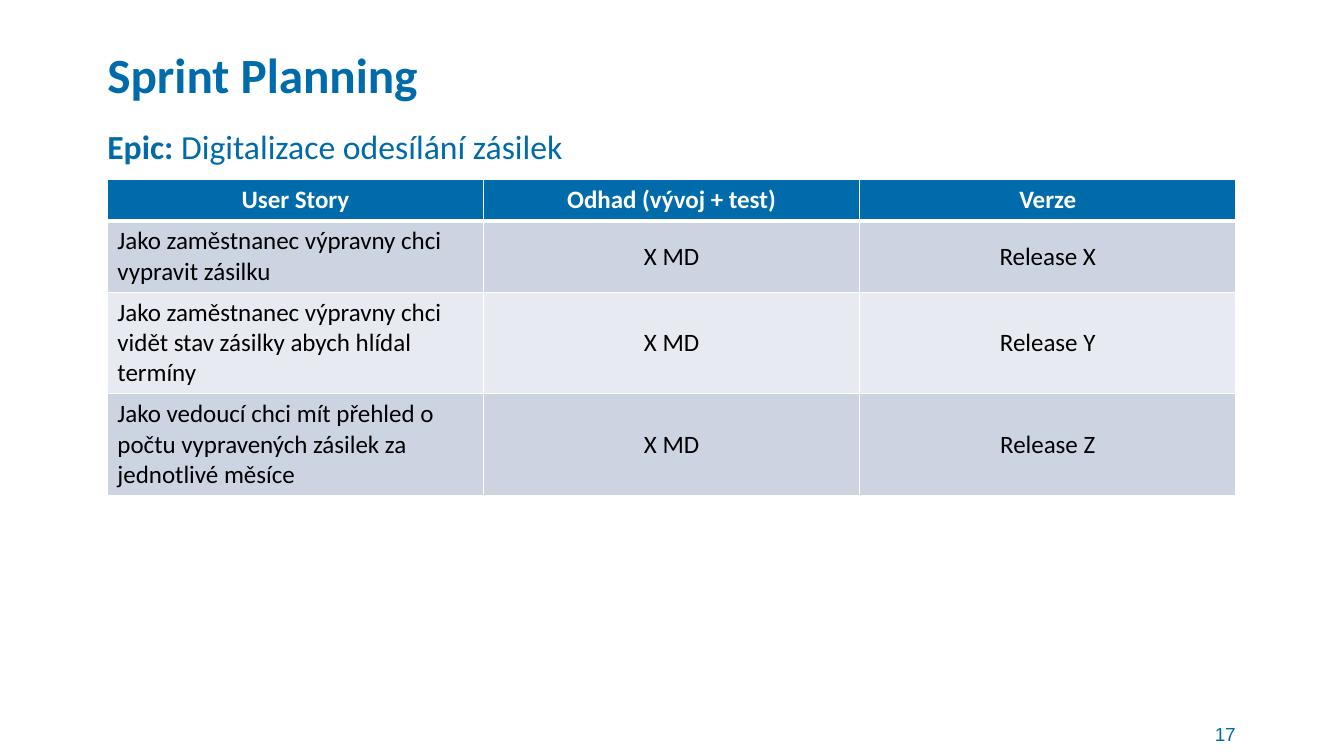
import pptx
import pptx.dml.color
import pptx.enum.text
import pptx.oxml
import pptx.oxml.ns
import pptx.util

Pt = pptx.util.Pt
ALIGN = pptx.enum.text.PP_ALIGN
ANCHOR = pptx.enum.text.MSO_ANCHOR
BLUE, WHITE, BLACK = "006BAB", "FFFFFF", "000000"
BANDS = ("CCD4E2", "E7EBF1")


def colour(value):
    return pptx.dml.color.RGBColor.from_string(value)


class SlideBuilder:
    """Holds the text style and the current slide, and adds its elements."""

    def __init__(self, slide, font="Calibri"):
        self.slide = slide
        self.font = font

    def add_runs(self, paragraph, runs, size, hue, align=ALIGN.LEFT, font=None):
        paragraph.alignment = align
        for text, bold in runs:
            run = paragraph.add_run()
            run.text = text
            style = {"name": font or self.font, "size": Pt(size), "bold": bold}
            for key, value in style.items():
                setattr(run.font, key, value)
            run.font.color.rgb = colour(hue)

    def frame(self, shape, box, anchor):
        for key, value in zip(("left", "top", "width", "height"), box):
            setattr(shape, key, Pt(value))
        layout = {
            "word_wrap": True,
            "auto_size": pptx.enum.text.MSO_AUTO_SIZE.NONE,
            "vertical_anchor": anchor,
            "margin_left": 0,
            "margin_top": 0,
            "margin_right": 0,
            "margin_bottom": 0,
        }
        for key, value in layout.items():
            setattr(shape.text_frame, key, value)
        return shape.text_frame.paragraphs[0]

    def title(self, text, box, size):
        heading = self.frame(self.slide.shapes.title, box, ANCHOR.BOTTOM)
        self.add_runs(heading, [(text, True)], size, BLUE)

    def text(self, runs, box, size, anchor=ANCHOR.TOP, **style):
        shape = self.slide.shapes.add_textbox(0, 0, 0, 0)
        self.add_runs(self.frame(shape, box, anchor), runs, size, BLUE, **style)

    def border(self, cell, side, width):
        line = pptx.oxml.parse_xml(
            f'<a:ln{side} {pptx.oxml.ns.nsdecls("a")} w="{Pt(width)}">'
            f'<a:solidFill><a:srgbClr val="{WHITE}"/></a:solidFill></a:ln{side}>'
        )
        cell._tc.get_or_add_tcPr().append(line)

    def cell(self, cell, text, row, column, size):
        header = row == 0
        widths = {"L": 1, "R": 1, "T": 3 if row == 1 else 1, "B": 3 if header else 1}
        for side, width in widths.items():
            self.border(cell, side, width)
        cell.fill.solid()
        cell.fill.fore_color.rgb = colour(BLUE if header else BANDS[(row - 1) % 2])
        cell.vertical_anchor = ANCHOR.TOP if header else ANCHOR.MIDDLE
        align = ALIGN.CENTER if header or column else ALIGN.LEFT
        paragraph = cell.text_frame.paragraphs[0]
        self.add_runs(paragraph, [(text, header)], size, WHITE if header else BLACK, align)

    def table(self, rows, left, top, width, row_height, size):
        grid = self.slide.shapes.add_table(
            len(rows), len(rows[0]), Pt(left), Pt(top), Pt(width), Pt(row_height * len(rows))
        ).table
        for r, row in enumerate(rows):
            for c, text in enumerate(row):
                self.cell(grid.cell(r, c), text, r, c, size)


def main():
    deck = pptx.Presentation()
    deck.slide_width, deck.slide_height = Pt(957.6), Pt(538.56)
    page = SlideBuilder(deck.slides.add_slide(deck.slide_layouts[5]))
    left, width = 76.5, 804
    stories = [
        ("User Story", "Odhad (vývoj + test)", "Verze"),
        ("Jako zaměstnanec výpravny chci vypravit zásilku", "X MD", "Release X"),
        ("Jako zaměstnanec výpravny chci vidět stav zásilky abych hlídal termíny", "X MD", "Release Y"),
        ("Jako vedoucí chci mít přehled o počtu vypravených zásilek za jednotlivé měsíce", "X MD", "Release Z"),
    ]
    page.title("Sprint Planning", (left, 15, width, 59), 35.1)
    page.text([("17", False)], (847, 514, 33.5, 17.5), 13.5, ANCHOR.MIDDLE,
              align=ALIGN.RIGHT, font="Arial")
    page.table(stories, left, 128, width, 29.5, 17.8)
    page.text([("Epic: ", True), ("Digitalizace odesílání zásilek", False)],
              (left, 89.5, 869, 442), 24)
    deck.save("out.pptx")


if __name__ == "__main__":
    main()
